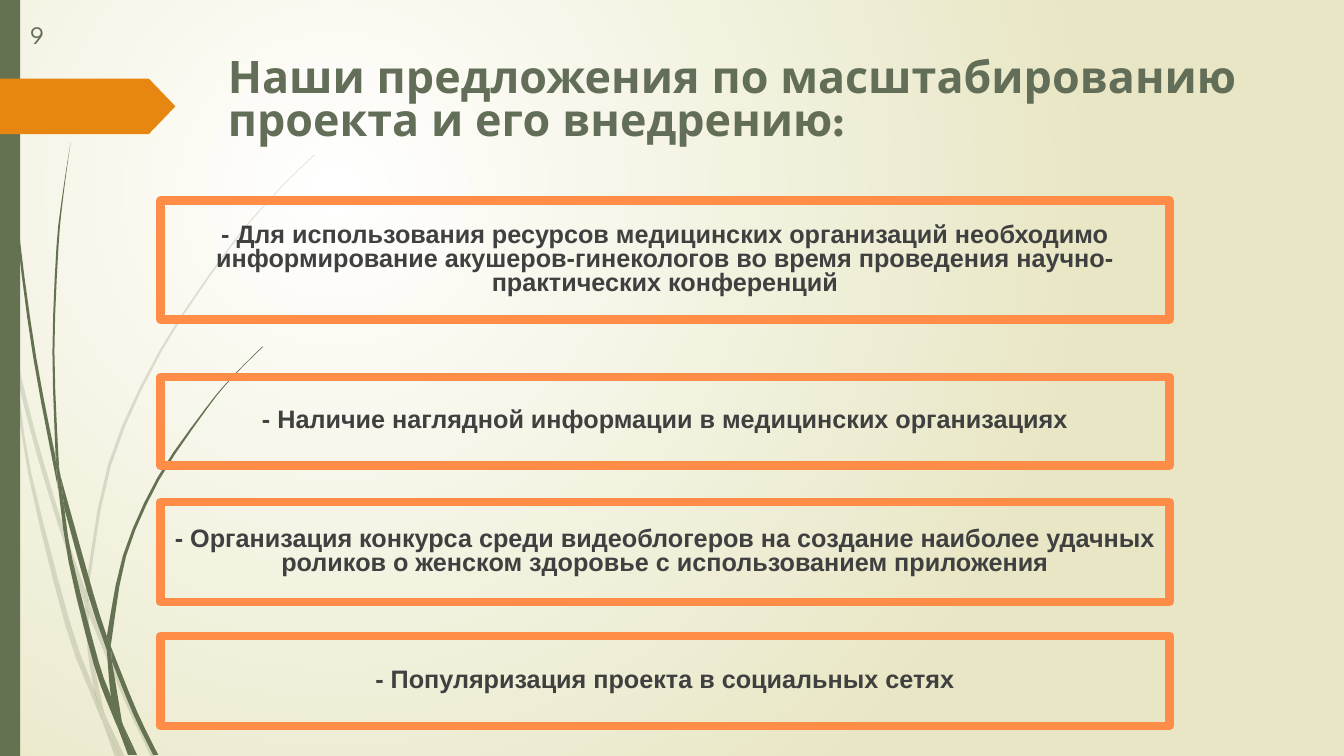
import pptx
import pptx.dml.color
import pptx.enum.shapes
import pptx.enum.text
import pptx.oxml
import pptx.oxml.ns
import pptx.util
from pptx.util import Inches

COLORS = {
    "white": "FFFFFF", "sand": "E8E6C4", "green": "647252", "orange": "E78712",
    "frame": "FF8D47", "heading": "636E58", "text": "404040",
}
HEADING_FONT, BODY_FONT = "League Spartan", "Arial"
SHAPES = pptx.enum.shapes.MSO_SHAPE
ALIGN = pptx.enum.text.PP_ALIGN
ANCHOR = pptx.enum.text.MSO_ANCHOR

# Grass pieces: the two long sides of each, in inches
PALE_GRASS = [
    ([(0, 2.82), (.09, 3.22), (.11, 3.5)], [(0, 2.99), (.1, 3.44)]),
    ([(.14, 3.45), (.36, 4.33), (.62, 5.2), (.85, 5.86)],
     [(.17, 3.76), (.36, 4.49), (.58, 5.22), (.84, 5.99)]),
    ([(.88, 5.96), (.92, 6.07), (1.27, 6.92), (1.55, 7.51)],
     [(.88, 6.1), (1.23, 6.94), (1.5, 7.51)]),
    ([(1.05, 7.11), (1.24, 7.51)], [(1.19, 7.51)]),
    ([(.11, 3.5), (.17, 3.76), (.31, 4.69), (.7, 6.19), (.93, 6.83), (.99, 7.07)],
     [(.11, 3.5), (.28, 4.7), (.65, 6.21), (.92, 6.93), (1.01, 7.14)]),
    ([(.84, 5.99), (.87, 6.46), (.93, 6.83), (.96, 6.92), (1.05, 7.11)],
     [(.88, 6.08), (.88, 6.1), (.91, 6.46), (1.03, 7.06)]),
    ([(3.12, 1.53), (2.89, 1.75), (2.68, 1.97), (2.28, 2.44), (1.58, 3.48),
      (1.07, 4.61), (.85, 5.84), (.85, 5.86)],
     [(3.12, 1.54), (2.9, 1.75), (2.68, 1.98), (2.29, 2.45), (1.6, 3.49),
      (1.1, 4.62), (.88, 5.84), (.88, 5.96)]),
    ([(1.01, 7.14), (1.14, 7.51)], [(1.19, 7.51)]),
    ([(.85, 5.86), (.84, 5.99)], [(.88, 5.96), (.88, 6.1)]),
    ([(.93, 6.83), (.99, 7.07), (1.01, 7.14), (1.19, 7.51)],
     [(.96, 6.92), (1.05, 7.11), (1.19, 7.51)]),
]
DARK_GRASS = [
    ([(.03, 0), (.04, .48), (.07, 1.1), (.17, 2.33), (.33, 3.55), (.56, 4.77),
      (.57, 4.81)],
     [(.04, 0), (.05, .48), (.08, 1.09), (.19, 2.32), (.36, 3.55), (.55, 4.53)]),
    ([(.6, 4.72), (.93, 5.9), (1.06, 6.31)],
     [(.64, 5.05), (.88, 5.92), (1.06, 6.45)]),
    ([(1.1, 6.41), (1.13, 6.49), (1.36, 7.06), (1.57, 7.49)],
     [(1.11, 6.56), (1.32, 7.08), (1.52, 7.49)]),
    ([(.57, 4.77), (.68, 5.57), (.93, 6.59), (1.11, 7.08), (1.17, 7.22)],
     [(.64, 5.05), (.72, 5.56), (.98, 6.57), (1.1, 6.91), (1.16, 7.17)]),
    ([(.7, 1.41), (.62, 1.93), (.56, 2.45), (.52, 3.49), (.55, 4.49)],
     [(.7, 1.41), (.63, 1.93), (.58, 2.45), (.54, 3.49), (.58, 4.53), (.6, 4.72)]),
    ([(1.22, 7.19), (1.36, 7.49)], [(1.33, 7.49)]),
    ([(.55, 4.49), (.57, 4.77), (.64, 5.05)], [(.6, 4.72)]),
    ([(2.6, 3.44), (2.31, 3.73), (2.04, 4.05), (1.56, 4.74), (1.22, 5.51),
      (1.06, 6.31)],
     [(2.61, 3.44), (2.31, 3.74), (2.05, 4.06), (1.58, 4.76), (1.25, 5.52),
      (1.11, 6.33), (1.1, 6.41)]),
    ([(1.17, 7.22), (1.27, 7.49)], [(1.31, 7.49)]),
    ([(1.06, 6.45), (1.1, 6.91), (1.16, 7.06), (1.22, 7.19)],
     [(1.09, 6.51), (1.11, 6.56), (1.21, 7.16)]),
    ([(1.06, 6.31), (1.06, 6.45), (1.11, 6.56)], [(1.1, 6.41)]),
    ([(1.1, 6.91), (1.17, 7.22), (1.3, 7.49)],
     [(1.16, 7.06), (1.22, 7.19), (1.33, 7.49)]),
]

# Proposals: (top, height, text)
PROPOSALS = [
    (1.99, 1.18, "- Для использования ресурсов медицинских организаций необходимо "
     "информирование акушеров-гинекологов во время проведения "
     "научно-практических конференций"),
    (3.74, .88, "- Наличие наглядной информации в медицинских организациях"),
    (4.98, .99, "- Организация конкурса среди видеоблогеров на создание наиболее "
     "удачных роликов о женском здоровье с использованием приложения"),
    (6.31, .89, "- Популяризация проекта в социальных сетях"),
]


def rgb(name):
    return pptx.dml.color.RGBColor.from_string(COLORS[name])


def add_xml(parent, tag, **attrs):
    child = pptx.oxml.parse_xml(f"<a:{tag} {pptx.oxml.ns.nsdecls('a')}/>")
    for key, value in attrs.items():
        child.set(key, value)
    parent.append(child)
    return child


def fill_plain(sp, color):
    sp.shadow.inherit = False
    sp.fill.solid()
    sp.fill.fore_color.rgb = rgb(color)
    sp.line.fill.background()


def write(sp, text, size, font, color, bold=False, align=ALIGN.LEFT,
          anchor=ANCHOR.MIDDLE, spacing=1.0):
    tf = sp.text_frame
    tf.word_wrap = True
    tf.auto_size = pptx.enum.text.MSO_AUTO_SIZE.NONE
    tf.vertical_anchor = anchor
    tf.text = text
    p = tf.paragraphs[0]
    p.alignment, p.line_spacing = align, spacing
    p.font.size, p.font.name, p.font.bold = pptx.util.Pt(size), font, bold
    p.font.color.rgb = rgb(color)


def add_background(slide):
    fill = slide.background.fill
    fill.gradient()
    for stop, color in zip(fill.gradient_stops, ("white", "sand")):
        stop.color.rgb = rgb(color)
    grad = next(slide.background._cSld.iter(pptx.oxml.ns.qn("a:gradFill")))
    grad.remove(grad.find(pptx.oxml.ns.qn("a:lin")))
    circle = add_xml(grad, "path", path="circle")
    add_xml(circle, "fillToRect", l="50000", t="50000", r="100000", b="100000")


def smooth(points, steps=3):
    """Run a Catmull-Rom curve through the points."""
    if len(points) < 3:
        return points
    ends = [points[0], *points, points[-1]]
    curve = []
    for a, b, c, d in zip(ends, ends[1:], ends[2:], ends[3:]):
        for t in (i / steps for i in range(steps)):
            curve.append([(2 * q + (r - p) * t + (2 * p - 5 * q + 4 * r - s) * t ** 2
                           + (3 * q - p - 3 * r + s) * t ** 3) / 2
                          for p, q, r, s in zip(a, b, c, d)])
    return curve + [points[-1]]


def add_grass(slide, pieces, alpha=None):
    for near, far in pieces:
        outline = [(Inches(x), Inches(y)) for x, y in smooth(near) + smooth(far)[::-1]]
        builder = slide.shapes.build_freeform(*outline[0])
        builder.add_line_segments(outline[1:], close=True)
        sp = builder.convert_to_shape()
        fill_plain(sp, "green")
        if alpha:
            color = next(sp._element.spPr.iter(pptx.oxml.ns.qn("a:srgbClr")))
            add_xml(color, "alpha", val=str(alpha * 1000))


def add_side_decoration(slide, height):
    add_grass(slide, PALE_GRASS, alpha=20)
    add_grass(slide, DARK_GRASS)
    bar = slide.shapes.add_shape(SHAPES.RECTANGLE, 0, 0, Inches(.2), height)
    fill_plain(bar, "green")
    arrow = slide.shapes.add_shape(SHAPES.PENTAGON, 0, Inches(.78),
                                   Inches(1.74), Inches(.55))
    arrow.adjustments[0] = .48
    fill_plain(arrow, "orange")


def add_heading(slide, left, top, width, height):
    title = slide.shapes.title
    title.left, title.top = Inches(left), Inches(top)
    title.width, title.height = Inches(width), Inches(height)
    write(title, "Наши предложения по масштабированию проекта и его внедрению:",
          32, HEADING_FONT, "heading", bold=True, anchor=ANCHOR.TOP, spacing=.8)


def add_page_number(slide, left, top, width, height):
    box = slide.shapes.add_textbox(Inches(left), Inches(top),
                                   Inches(width), Inches(height))
    write(box, "9", 18, HEADING_FONT, "heading")


def add_proposals(slide, left, width):
    for top, height, text in PROPOSALS:
        sp = slide.shapes.add_shape(SHAPES.RECTANGLE, Inches(left), Inches(top),
                                    Inches(width), Inches(height))
        sp.shadow.inherit = False
        sp.fill.background()
        sp.line.color.rgb = rgb("frame")
        sp.line.width = pptx.util.Pt(6)
        add_xml(sp.line._get_or_add_ln(), "round")
        write(sp, text, 18, BODY_FONT, "text", bold=True,
              align=ALIGN.CENTER, spacing=.8)


def main():
    prs = pptx.Presentation()
    prs.slide_width, prs.slide_height = Inches(13.33), Inches(7.5)
    slide = prs.slides.add_slide(prs.slide_layouts[5])
    add_background(slide)
    add_side_decoration(slide, prs.slide_height)
    add_heading(slide, 2.16, .54, 11.17, 1.4)
    add_page_number(slide, .2, .14, .85, .4)
    add_proposals(slide, 1.59, 10.01)
    prs.save("out.pptx")


if __name__ == "__main__":
    main()
